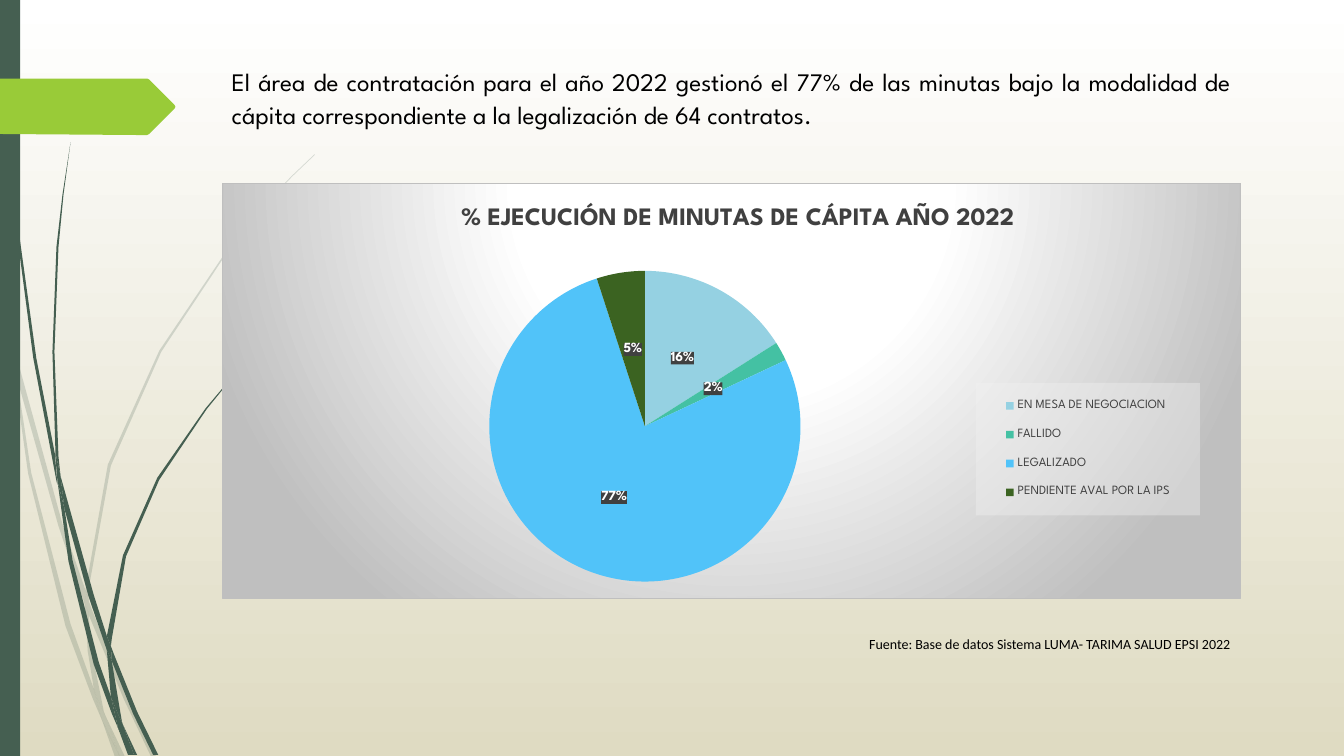
import pptx
import pptx.chart.data
import pptx.dml.color
import pptx.enum.chart
import pptx.enum.shapes
import pptx.enum.text
import pptx.oxml
import pptx.oxml.ns
import pptx.util

RGB = pptx.dml.color.RGBColor
qn = pptx.oxml.ns.qn
PX = 9144  # 100 px to the inch

BLACK = RGB(0x00, 0x00, 0x00)
WHITE = RGB(0xFF, 0xFF, 0xFF)
SAND = RGB(0xDF, 0xDB, 0xC2)
PINE = RGB(0x45, 0x5F, 0x51)
LIME = RGB(0x99, 0xCB, 0x38)
CHARCOAL = RGB(0x40, 0x40, 0x40)
SILVER = RGB(0xBF, 0xBF, 0xBF)
PALE = RGB(0xF2, 0xF2, 0xF2)

HEADING = "League Spartan"
BODY = "Calibri"

# Outlines of the grass blades, in px
FAINT_BLADES = [
    [(11, 350), (9, 322), (0, 282), (0, 299), (10, 344)],
    [(58, 522), (84, 599), (85, 586), (62, 520), (14, 345), (17, 376)],
    [(92, 607), (88, 596), (88, 610), (123, 694), (150, 751), (155, 751), (127, 692)],
    [(119, 751), (124, 751), (105, 711)],
    [(93, 683), (70, 619), (31, 469), (17, 376), (11, 350), (28, 470), (65, 621),
     (92, 693), (101, 714), (99, 707)],
    [(84, 599), (87, 646), (93, 683), (96, 692), (105, 711), (103, 706), (91, 646),
     (88, 610), (88, 608)],
    [(88, 584), (110, 462), (160, 349), (229, 245), (268, 198), (290, 175), (312, 154),
     (312, 153), (289, 175), (268, 197), (228, 244), (158, 348), (107, 461), (85, 584),
     (85, 586), (88, 596)],
    [(101, 714), (114, 751), (119, 751)],
    [(88, 608), (88, 610), (88, 596), (85, 586), (84, 599)],
    [(96, 692), (93, 683), (99, 707), (101, 714), (119, 751), (105, 711)],
]
DARK_BLADES = [
    [(7, 110), (17, 233), (33, 355), (56, 477), (57, 481), (55, 457), (55, 453), (36, 355),
     (19, 232), (8, 109), (5, 48), (4, 0), (3, 0), (4, 48)],
    [(88, 592), (106, 645), (106, 633), (106, 631), (93, 590), (60, 472), (64, 505)],
    [(113, 649), (110, 641), (111, 656), (132, 708), (152, 749), (157, 749), (136, 706)],
    [(110, 691), (98, 657), (72, 556), (64, 505), (57, 477), (68, 557), (93, 659),
     (111, 708), (117, 722), (116, 717)],
    [(60, 472), (58, 453), (54, 349), (58, 245), (63, 193), (70, 141), (62, 193),
     (56, 245), (52, 349), (55, 449)],
    [(133, 749), (136, 749), (122, 719)],
    [(57, 477), (64, 505), (60, 472), (55, 449), (55, 453)],
    [(111, 633), (125, 552), (158, 476), (205, 406), (231, 374), (245, 359), (261, 344),
     (260, 344), (245, 358), (231, 373), (204, 405), (156, 474), (122, 551), (106, 631),
     (110, 641)],
    [(117, 722), (127, 749), (131, 749)],
    [(106, 645), (110, 691), (116, 706), (122, 719), (121, 716), (111, 656), (109, 651)],
    [(106, 645), (109, 651), (111, 656), (110, 641), (106, 631), (106, 633)],
    [(116, 706), (110, 691), (116, 717), (117, 722), (130, 749), (133, 749), (122, 719)],
]
ARROW = [(173, 108), (148, 133), (146, 134), (136, 134), (0, 133), (0, 78), (136, 78),
         (146, 78), (148, 79), (173, 104), (174, 106)]

SLICES = [
    ("EN MESA DE NEGOCIACION", 16, RGB(0x95, 0xD1, 0xE2)),
    ("FALLIDO", 2, RGB(0x44, 0xC1, 0xA3)),
    ("LEGALIZADO", 77, RGB(0x51, 0xC3, 0xF9)),
    ("PENDIENTE AVAL POR LA IPS", 5, RGB(0x3B, 0x63, 0x21)),
]


def chart_xml(tag, body):
    return pptx.oxml.parse_xml(
        f'<c:{tag} {pptx.oxml.ns.nsdecls("c", "a")}>{body}</c:{tag}>')


def solid_xml(color, alpha):
    return (f'<a:solidFill><a:srgbClr val="{color}"><a:alpha val="{alpha * 1000}"/>'
            '</a:srgbClr></a:solidFill>')


def layout_xml(x, y, w=None, h=None, inner=False):
    body = '<c:layoutTarget val="inner"/>' if inner else ""
    body += '<c:xMode val="edge"/><c:yMode val="edge"/>'
    for name, value in zip("xywh", (x, y, w, h)):
        if value is not None:
            body += f'<c:{name} val="{value}"/>'
    return chart_xml("layout", f"<c:manualLayout>{body}</c:manualLayout>")


def set_font(font, name, size, color, bold=False):
    font.name, font.size, font.bold = name, pptx.util.Pt(size), bold
    font.color.rgb = color


class SlideBuilder:
    def __init__(self, prs):
        self.slide = prs.slides.add_slide(prs.slide_layouts[6])
        self.shapes = self.slide.shapes

    def background(self, top, bottom):
        fill = self.slide.background.fill
        fill.gradient()
        fill.gradient_angle = 270
        for stop, color in zip(fill.gradient_stops, (top, bottom)):
            stop.color.rgb = color

    def paint(self, sp, color, alpha=100):
        sp.shadow.inherit = False
        sp.fill.solid()
        sp.fill.fore_color.rgb = color
        sp.line.fill.background()
        if alpha < 100:
            clr = sp.element.spPr.find(qn("a:solidFill"))[0]
            clr.append(pptx.oxml.parse_xml(
                f'<a:alpha {pptx.oxml.ns.nsdecls("a")} val="{alpha * 1000}"/>'))

    def outline(self, points, color, alpha=100, shapes=None):
        start, *rest = [(x * PX, y * PX) for x, y in points]
        builder = (shapes or self.shapes).build_freeform(*start)
        builder.add_line_segments(rest, close=True)
        self.paint(builder.convert_to_shape(), color, alpha)

    def blades(self, outlines, color, alpha=100):
        group = self.shapes.add_group_shape()
        for points in outlines:
            self.outline(points, color, alpha, group.shapes)

    def rect(self, x, y, w, h, color):
        kind = pptx.enum.shapes.MSO_SHAPE.RECTANGLE
        self.paint(self.shapes.add_shape(kind, x * PX, y * PX, w * PX, h * PX), color)

    def text(self, x, y, w, h, text, font, size, align, after, wrap=True):
        tf = self.shapes.add_textbox(x * PX, y * PX, w * PX, h * PX).text_frame
        tf.word_wrap = wrap
        tf.auto_size = pptx.enum.text.MSO_AUTO_SIZE.SHAPE_TO_FIT_TEXT
        p = tf.paragraphs[0]
        p.text, p.alignment = text, align
        p.line_spacing, p.space_after = 1.07, pptx.util.Pt(after)
        set_font(p.font, font, size, BLACK)

    def pie(self, x, y, w, h, title, slices):
        data = pptx.chart.data.CategoryChartData()
        data.categories = [name for name, _, _ in slices]
        data.add_series("Series 1", [value for _, value, _ in slices])
        chart = self.shapes.add_chart(pptx.enum.chart.XL_CHART_TYPE.PIE, x * PX, y * PX,
                                      w * PX, h * PX, data).chart
        set_font(chart.font, HEADING, 10, BLACK)
        root = chart.element.find(qn("c:chart"))

        # Title
        chart.has_title = True
        p = chart.chart_title.text_frame.paragraphs[0]
        p.text = title
        set_font(p.font, HEADING, 18, CHARCOAL, bold=True)
        self.place(root.find(qn("c:title")), "c:tx", layout_xml(0.23, 0.04))

        # Slices and labels
        plot = chart.plots[0]
        plot.vary_by_categories = True
        series = plot.series[0]
        for i, (_, _, color) in enumerate(slices):
            fmt = series.points[i].format
            fmt.fill.solid()
            fmt.fill.fore_color.rgb = color
            fmt.line.fill.background()
        labels = series.data_labels
        labels.show_value, labels.show_percentage = False, True
        labels.number_format, labels.number_format_is_linked = "0%", False
        labels.position = pptx.enum.chart.XL_LABEL_POSITION.CENTER
        set_font(labels.font, HEADING, 10, WHITE, bold=True)
        area = root.find(qn("c:plotArea"))
        self.back(next(area.iter(qn("c:dLbls"))), CHARCOAL, 90)
        self.place(area, None, layout_xml(0.26, 0.21, 0.31, 0.75, inner=True))

        # Legend
        chart.has_legend = True
        chart.legend.position = pptx.enum.chart.XL_LEGEND_POSITION.RIGHT
        chart.legend.include_in_layout = False
        set_font(chart.legend.font, HEADING, 9, CHARCOAL)
        legend = root.find(qn("c:legend"))
        self.place(legend, "c:legendPos", layout_xml(0.74, 0.48, 0.22, 0.32))
        self.back(legend, PALE, 39)

        # Chart area
        stops = "".join(f'<a:gs pos="{pos * 1000}"><a:srgbClr val="{color}"/></a:gs>'
                        for pos, color in ((0, WHITE), (39, WHITE), (100, SILVER)))
        root.addnext(chart_xml("spPr", (
            f'<a:gradFill><a:gsLst>{stops}</a:gsLst><a:path path="circle">'
            '<a:fillToRect l="50000" t="-80000" r="50000" b="180000"/></a:path></a:gradFill>'
            f'<a:ln w="9525"><a:solidFill><a:srgbClr val="{SILVER}"/></a:solidFill></a:ln>')))

    def back(self, element, color, alpha):
        element.find(qn("c:txPr")).addprevious(chart_xml("spPr", solid_xml(color, alpha)))

    def place(self, element, after, layout):
        for old in element.findall(qn("c:layout")):
            element.remove(old)
        if after:
            element.find(qn(after)).addnext(layout)
        else:
            element.insert(0, layout)


def main():
    prs = pptx.Presentation()
    prs.slide_width, prs.slide_height = 1333 * PX, 750 * PX
    s = SlideBuilder(prs)
    align = pptx.enum.text.PP_ALIGN

    # Backdrop
    s.background(WHITE, SAND)
    s.blades(FAINT_BLADES, PINE, alpha=20)
    s.blades(DARK_BLADES, PINE)
    s.rect(0, 0, 20, 750, PINE)
    s.outline(ARROW, LIME)

    # Content
    s.pie(220, 182, 1011, 412, "% EJECUCIÓN DE MINUTAS DE CÁPITA AÑO 2022", SLICES)
    s.text(851, 624, 379, 28, "Fuente: Base de datos Sistema LUMA- TARIMA SALUD EPSI 2022",
           BODY, 10, align.RIGHT, after=10, wrap=False)
    s.text(220, 59, 1011, 75, "El área de contratación para el año 2022 gestionó el 77% de las "
           "minutas bajo la modalidad de cápita correspondiente a la legalización de "
           "64 contratos.", HEADING, 18, align.JUSTIFY, after=8)
    prs.save("out.pptx")


if __name__ == "__main__":
    main()
